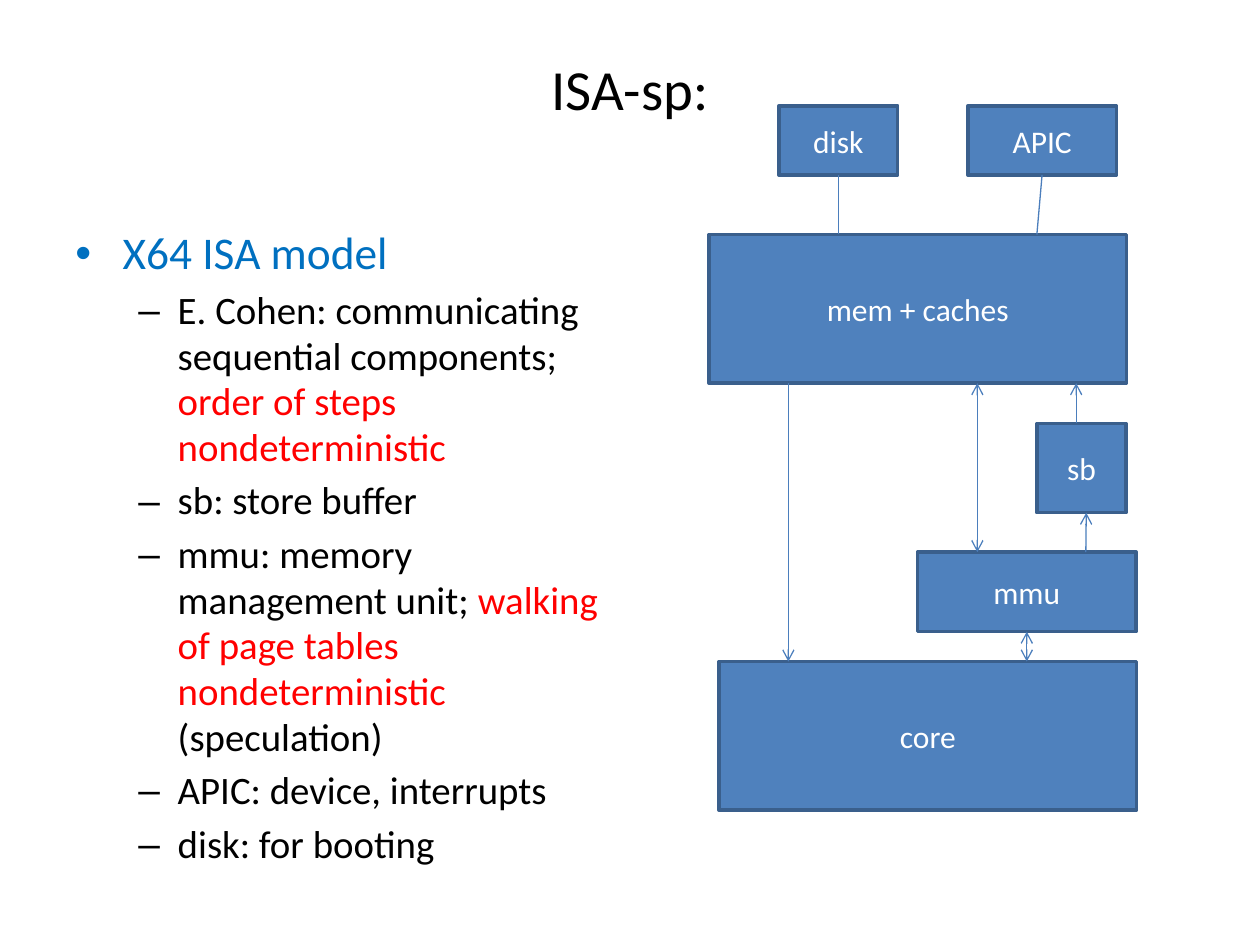
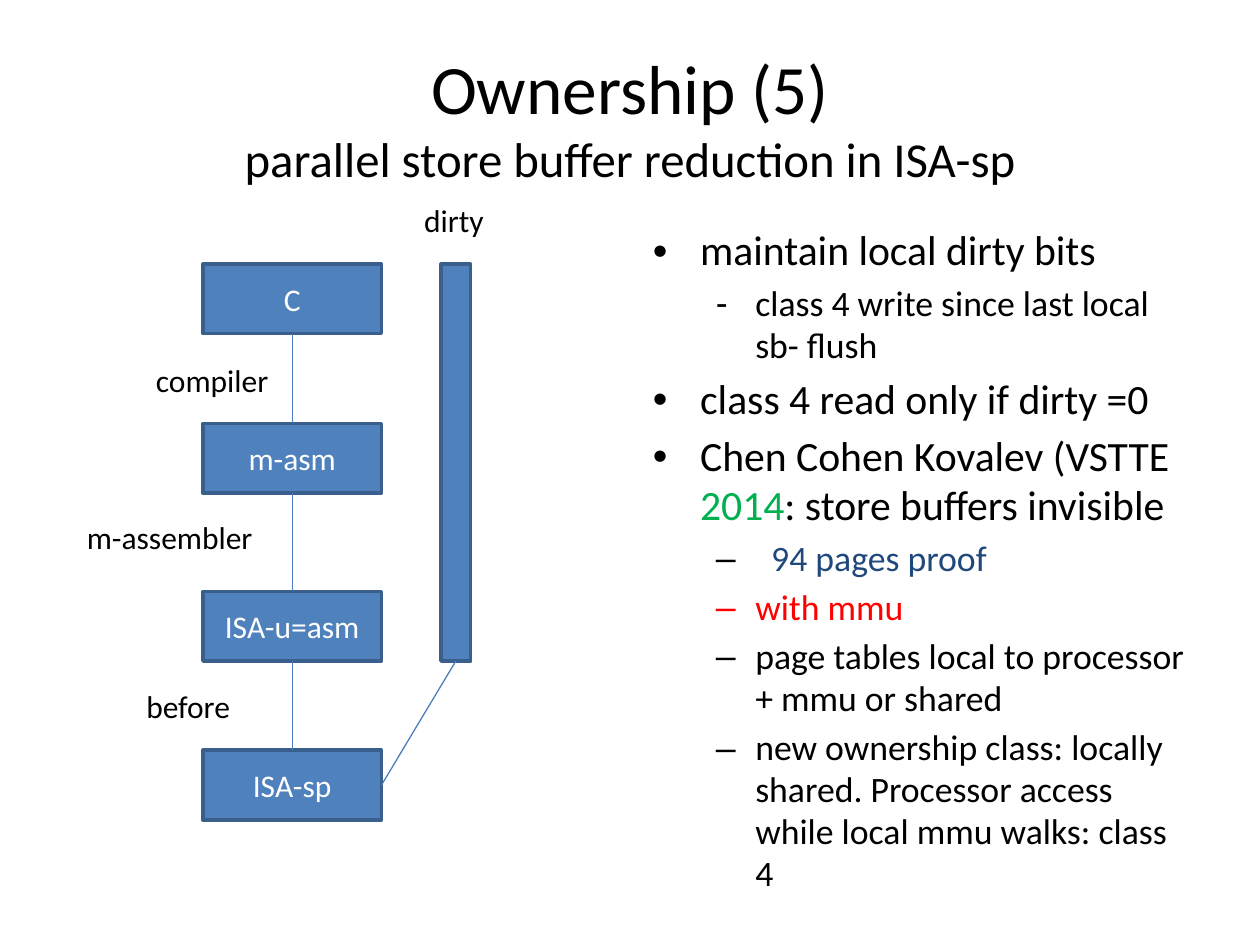
from lxml import etree
from pptx import Presentation
from pptx.dml.color import RGBColor
from pptx.enum import shapes, text
from pptx.oxml import ns
from pptx.util import Pt

FONT = "Calibri"
BLACK = RGBColor(0x00, 0x00, 0x00)
WHITE = RGBColor(0xFF, 0xFF, 0xFF)
BLUE = RGBColor(0x00, 0x70, 0xC0)
NAVY = RGBColor(0x1F, 0x49, 0x7D)
RED = RGBColor(0xFF, 0x00, 0x00)
GREEN = RGBColor(0x00, 0xB0, 0x50)
BOX_FILL = RGBColor(0x4F, 0x81, 0xBD)
BOX_EDGE = RGBColor(0x3A, 0x5F, 0x8C)
LINK = RGBColor(0x4B, 0x7E, 0xBC)
LABEL_SIZE = 18

# bullet style: left margin, hanging indent, bullet character
BULLETS = {
    "point": (27, 27, "•"),
    "dash": (58.5, 22.5, "–"),
    "hyphen": (58.5, 22.5, "-"),
    "inset dash": (63, 27, "–"),
}


def add_box(slide, caption, left, top, width, height):
    box = slide.shapes.add_shape(
        shapes.MSO_SHAPE.RECTANGLE, Pt(left), Pt(top), Pt(width), Pt(height))
    box.shadow.inherit = False
    box.fill.solid()
    box.fill.fore_color.rgb = BOX_FILL
    box.line.color.rgb = BOX_EDGE
    box.line.width = Pt(2)
    if caption:
        box.text_frame.text = caption
        box.text_frame.vertical_anchor = text.MSO_ANCHOR.MIDDLE
        paragraph = box.text_frame.paragraphs[0]
        paragraph.alignment = text.PP_ALIGN.CENTER
        font = paragraph.runs[0].font
        font.name, font.size, font.color.rgb = FONT, Pt(LABEL_SIZE), WHITE
    return box


def add_link(slide, start, end, arrows=()):
    """Draw a thin line; arrows lists the ends ("headEnd", "tailEnd") with a tip."""
    link = slide.shapes.add_connector(
        shapes.MSO_CONNECTOR.STRAIGHT, *[Pt(value) for value in start + end])
    link.line.color.rgb = LINK
    link.line.width = Pt(0.75)
    outline = link.line._get_or_add_ln()
    for tip in arrows:
        etree.SubElement(outline, ns.qn("a:" + tip), type="arrow")
    etree.SubElement(link._element.spPr, ns.qn("a:effectLst"))
    return link


deck = Presentation()
deck.slide_width, deck.slide_height = Pt(720), Pt(540)

# Titles and bullet lists: title lines, title bottom inset, list left,
# sizes of points and of sub-points, paragraphs
pages = [
    ([("ISA-sp:", 32.4)], 36, 36, 25.9, 22.2, [
        ("point", [("X64 ISA model", BLUE)]),
        ("dash", [("E. Cohen: communicating sequential components; ", BLACK),
                  ("order of steps nondeterministic", RED)]),
        ("dash", [("sb: store buffer", BLACK)]),
        ("dash", [("mmu: memory management unit; ", BLACK),
                  ("walking of page tables nondeterministic ", RED),
                  ("(speculation)", BLACK)]),
        ("dash", [("APIC: device, interrupts", BLACK)]),
        ("dash", [("disk: for booting", BLACK)]),
    ]),
    ([("Ownership (5)", 39.6),
      ("parallel store buffer reduction in ISA-sp", 27.9)],
     3.6, 366, 23.8, 20.4, [
        ("point", [("maintain local dirty bits", BLACK)]),
        ("hyphen", [("class 4 write since last local sb- flush", BLACK)]),
        ("point", [("class 4 read only if dirty =0", BLACK)]),
        ("point", [("Chen Cohen Kovalev (VSTTE ", BLACK), ("2014", GREEN),
                   (": store buffers invisible", BLACK)]),
        ("inset dash", [(" ", BLACK), ("94 pages proof", NAVY)]),
        ("dash", [("with mmu", RED)]),
        ("dash", [("page tables local to processor + mmu or shared", BLACK)]),
        ("dash", [("new ownership class: locally shared. Processor access "
                   "while local mmu walks: class 4", BLACK)]),
    ]),
]

slides = []
for title_lines, title_inset, list_left, point_size, sub_size, items in pages:
    slide = deck.slides.add_slide(deck.slide_layouts[5])
    slides.append(slide)

    title = slide.shapes.title
    title.left, title.top, title.width, title.height = Pt(36), Pt(21.6), Pt(648), Pt(90)
    heading = title.text_frame
    heading.text = "\n".join(line for line, size in title_lines)
    heading.auto_size = text.MSO_AUTO_SIZE.NONE
    heading.vertical_anchor = text.MSO_ANCHOR.MIDDLE
    heading.margin_bottom = Pt(title_inset)
    for paragraph, (line, size) in zip(heading.paragraphs, title_lines):
        paragraph.alignment = text.PP_ALIGN.CENTER
        font = paragraph.runs[0].font
        font.name, font.size, font.color.rgb = FONT, Pt(size), BLACK

    notes = slide.shapes.add_textbox(Pt(list_left), Pt(126), Pt(318), Pt(356.4)).text_frame
    notes.word_wrap = True
    for index, (style, parts) in enumerate(items):
        paragraph = notes.add_paragraph() if index else notes.paragraphs[0]
        margin, hang, bullet = BULLETS[style]
        size = point_size if style == "point" else sub_size
        paragraph.level = 0 if style == "point" else 1
        paragraph.line_spacing = 0.98
        paragraph.space_before = Pt(0.2 * size)
        properties = paragraph._p.get_or_add_pPr()
        properties.set("marL", str(Pt(margin)))
        properties.set("indent", str(-Pt(hang)))
        etree.SubElement(properties, ns.qn("a:buFont"), typeface="Arial")
        etree.SubElement(properties, ns.qn("a:buChar"), char=bullet)
        for words, colour in parts:
            run = paragraph.add_run()
            run.text = words
            run.font.name, run.font.size, run.font.color.rgb = FONT, Pt(size), colour

machine, reduction = slides

# Slide 1: components of the machine
MEM_TOP, MEM_BOTTOM = 134, 219
SB_TOP, SB_BOTTOM = 242, 293
MMU_TOP, MMU_BOTTOM = 315.5, 361
CORE_TOP = 378
BOTH = ("headEnd", "tailEnd")
UP = ("tailEnd",)

add_box(machine, "mem + caches", 405.25, MEM_TOP, 238.5, MEM_BOTTOM - MEM_TOP)
add_box(machine, "sb", 592.5, SB_TOP, 51, SB_BOTTOM - SB_TOP)
add_box(machine, "core", 411, CORE_TOP, 238.5, 85)
mmu = add_box(machine, "mmu", 524.25, MMU_TOP, 125, MMU_BOTTOM - MMU_TOP)

core_to_mmu = add_link(machine, (586.75, CORE_TOP), (586.75, MMU_BOTTOM), BOTH)
core_to_mmu.end_connect(mmu, 2)
add_link(machine, (558.5, MMU_TOP), (558.5, MEM_BOTTOM), BOTH)
add_link(machine, (620.5, MMU_TOP), (620.75, SB_BOTTOM), UP)
add_link(machine, (615, SB_TOP), (615, MEM_BOTTOM), UP)
add_link(machine, (450.5, MEM_BOTTOM), (450.5, CORE_TOP), UP)

for device, left, width, mem_x in [("APIC", 553, 85, 592.5), ("disk", 445, 68, 479)]:
    device_box = add_box(machine, device, left, 60.5, width, 39.5)
    bus = add_link(machine, (left + width / 2, 100), (mem_x, MEM_TOP))
    bus.begin_connect(device_box, 2)

# Slide 2: stack of language layers with the dirty bit beside it
LAYER_LEFT, LAYER_WIDTH, LAYER_HEIGHT = 116, 102, 39.75
layer_tops = [("C", 151), ("m-asm", 242), ("ISA-u=asm", 338), ("ISA-sp", 428.75)]
layers = [add_box(reduction, layer, LAYER_LEFT, top, LAYER_WIDTH, LAYER_HEIGHT)
          for layer, top in layer_tops]
for upper, lower in zip(layers, layers[1:]):
    step = add_link(reduction, (0, 0), (0, 0))
    step.begin_connect(upper, 2)
    step.end_connect(lower, 0)

dirty_bar = add_box(reduction, "", 252, 151, 17, 226.75)
dirty_link = add_link(reduction, (0, 0), (0, 0))
dirty_link.begin_connect(dirty_bar, 2)
dirty_link.end_connect(layers[-1], 3)

for label, left, top, width in [("compiler", 82, 202.5, 79),
                                ("m-assembler", 42.5, 292.5, 110),
                                ("before", 76.5, 389, 62.5),
                                ("dirty", 235.25, 111.5, 49)]:
    label_frame = reduction.shapes.add_textbox(
        Pt(left), Pt(top), Pt(width), Pt(29)).text_frame
    label_frame.text = label
    label_frame.word_wrap = False
    label_frame.auto_size = text.MSO_AUTO_SIZE.SHAPE_TO_FIT_TEXT
    font = label_frame.paragraphs[0].runs[0].font
    font.name, font.size, font.color.rgb = FONT, Pt(LABEL_SIZE), BLACK

deck.save("out.pptx")
